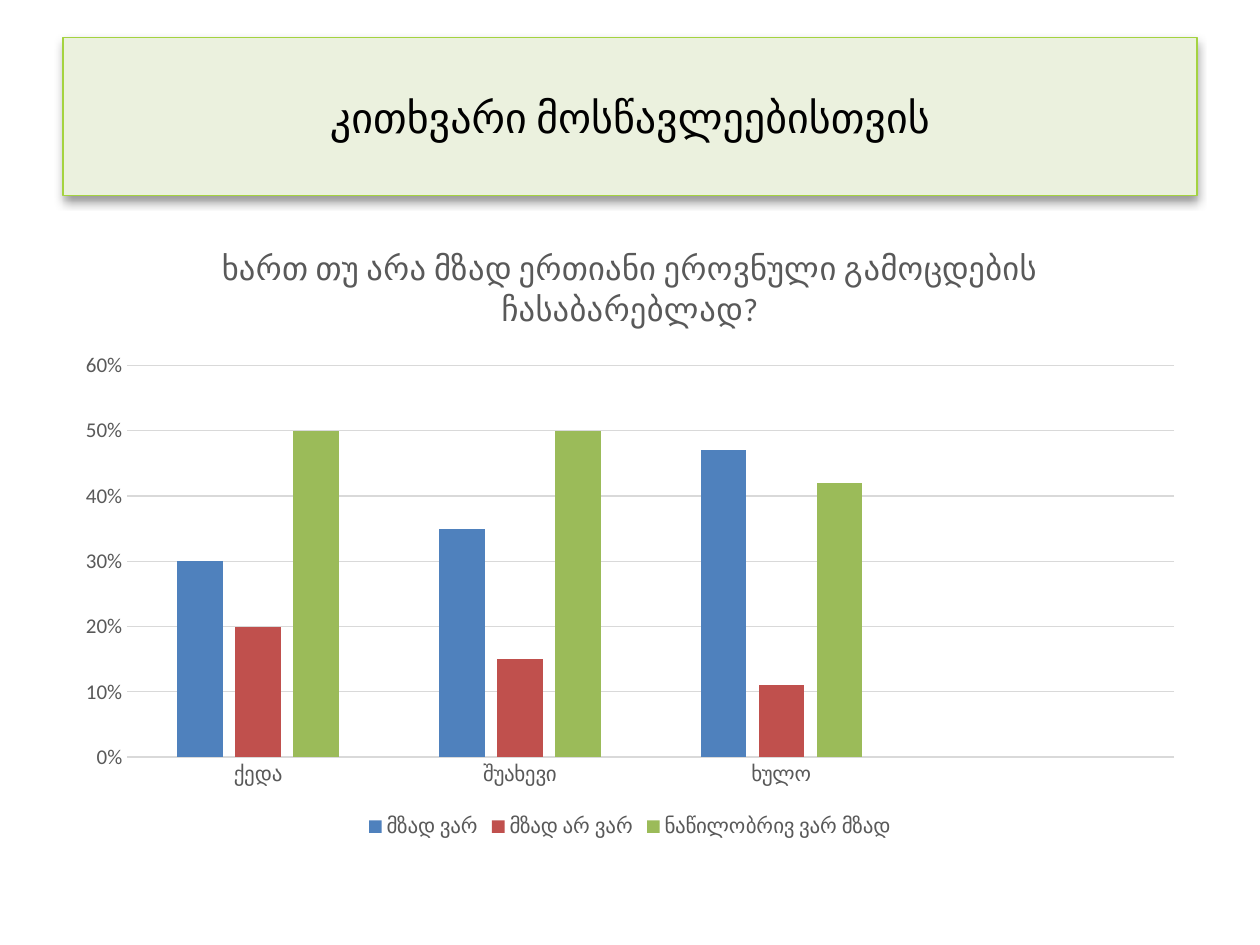
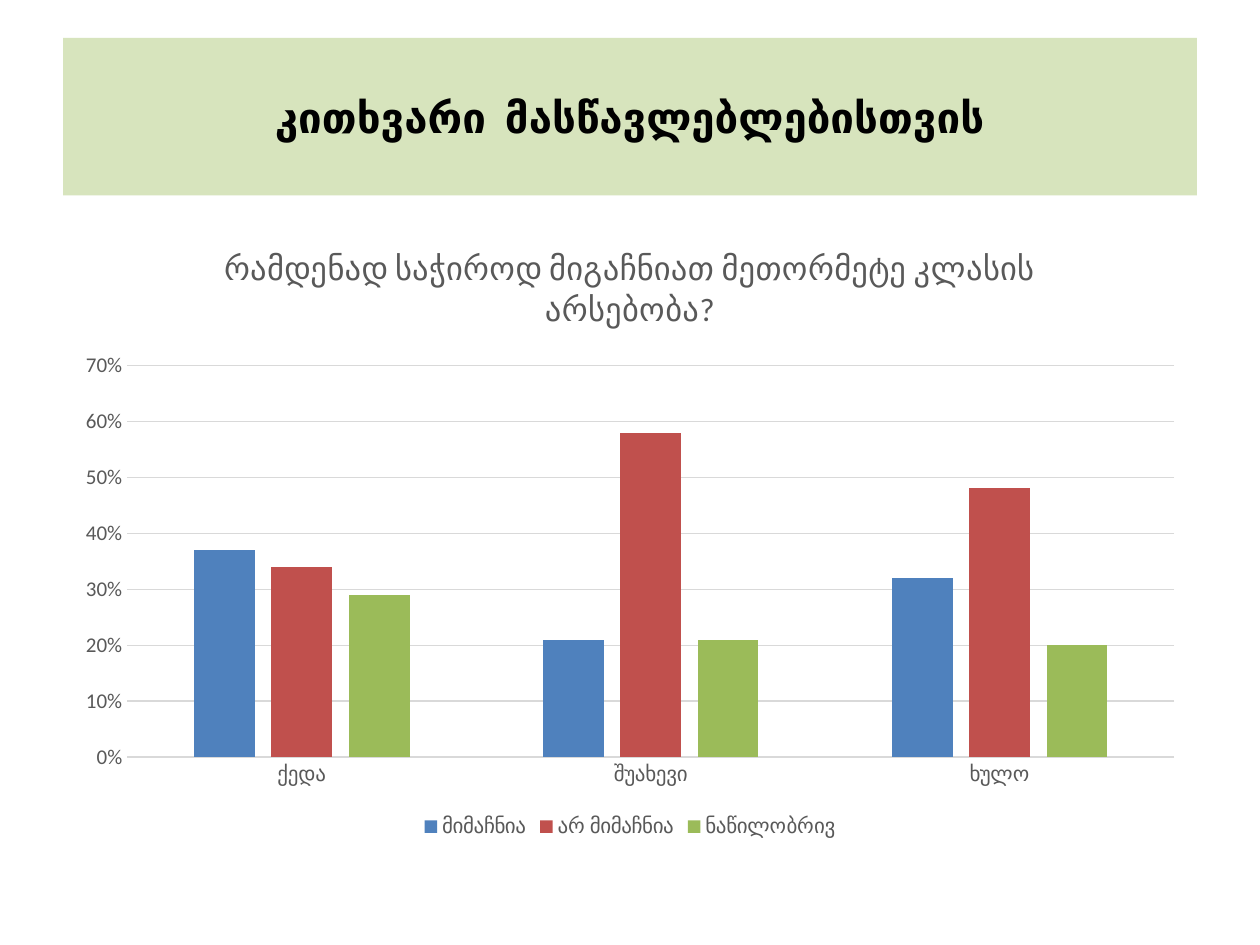
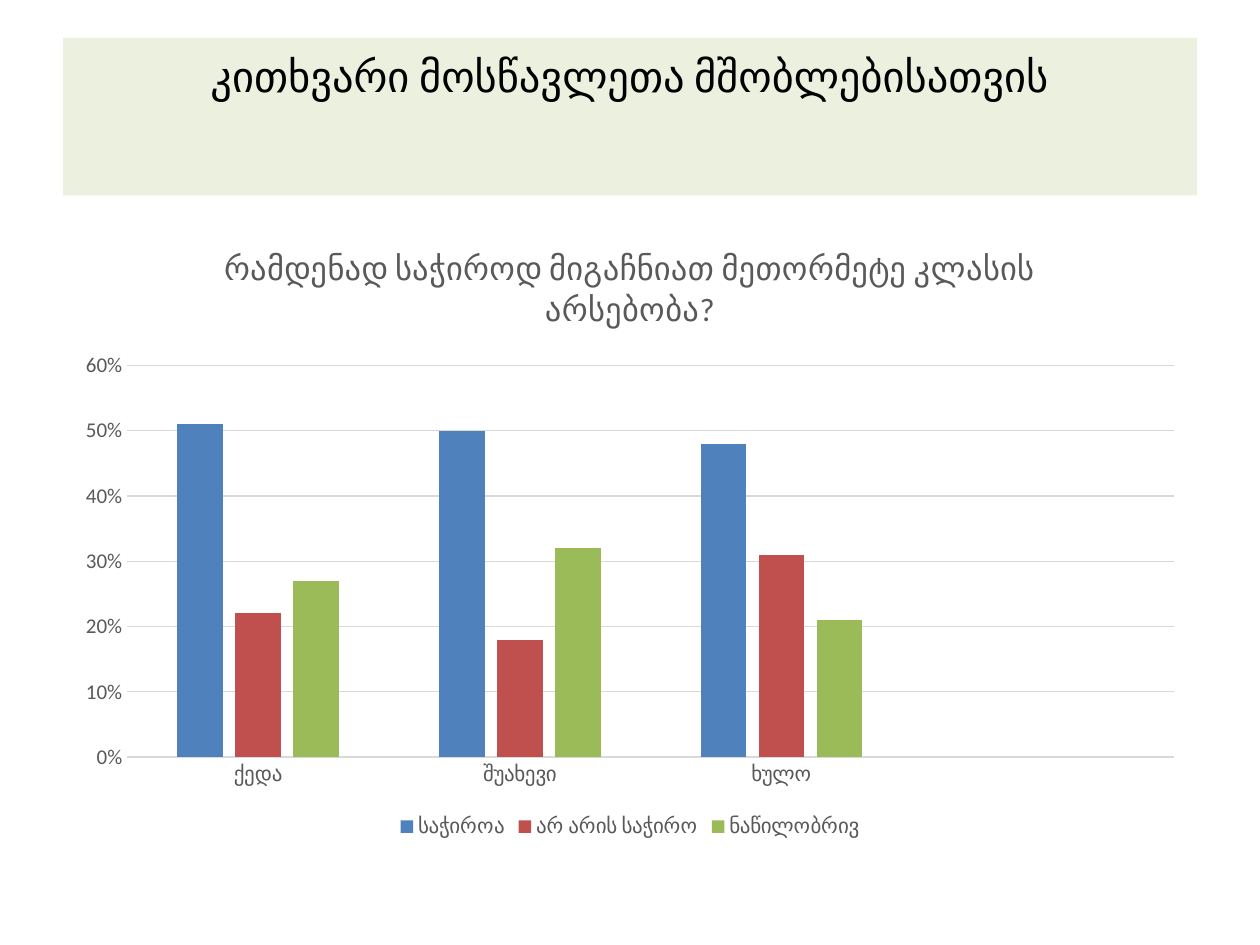
from dataclasses import dataclass

from lxml.etree import SubElement
from pptx import Presentation
from pptx.chart.data import CategoryChartData
from pptx.dml.color import RGBColor as Rgb
from pptx.enum.chart import XL_CHART_TYPE as ChartType
from pptx.enum.chart import XL_LEGEND_POSITION as LegendPosition
from pptx.enum.chart import XL_TICK_MARK as TickMark
from pptx.enum.text import MSO_ANCHOR as Anchor
from pptx.enum.text import MSO_AUTO_SIZE as AutoSize
from pptx.enum.text import PP_ALIGN as Align
from pptx.oxml import parse_xml
from pptx.oxml.ns import nsdecls, qn
from pptx.util import Pt

EMU_PER_PX = 9144


@dataclass(frozen=True)
class Theme:
    font: str = "Calibri"
    ink: str = "000000"
    muted: str = "595959"
    grid: str = "D9D9D9"
    pale_band: str = "EBF1DE"
    green_band: str = "D7E4BD"
    band_edge: str = "A4D340"
    answers: tuple = ("4F81BD", "C0504D", "9BBB59")
    heading_size: float = 24
    question_size: float = 18.6
    label_size: float = 12
    base_size: float = 10
    hairline: float = 0.75


THEME = Theme()
SLIDE_SIZE = (1000, 750)
BAND_BOX = (50, 30, 900, 125)
CHART_BOX = (50, 175, 900, 495)
PLOT_BOX = (51, 115, 831, 311)
DISTRICTS = ["ქედა", "შუახევი", "ხულო"]
CLASS_QUESTION = "რამდენად საჭიროდ მიგაჩნიათ მეთორმეტე კლასის არსებობა?"


def px(*lengths):
    return [length * EMU_PER_PX for length in lengths]


def style_font(font, size, color, bold=False):
    font.name = THEME.font
    font.size = Pt(size)
    font.bold = bold
    font.color.rgb = Rgb.from_string(color)


def style_line(line, color):
    line.color.rgb = Rgb.from_string(color)
    line.width = Pt(THEME.hairline)


def add_shadow(shape):
    effects = SubElement(shape._element.spPr, qn("a:effectLst"))
    shadow = SubElement(effects, qn("a:outerShdw"), blurRad=str(Pt(5.2)),
                        dist=str(Pt(3)), dir="5400000", rotWithShape="0")
    color = SubElement(shadow, qn("a:srgbClr"), val=THEME.ink)
    SubElement(color, qn("a:alpha"), val="40000")


def add_heading(slide, wording, band, size=THEME.heading_size, bold=False,
                raised=False, space_below=5):
    heading = slide.shapes.title
    heading.left, heading.top, heading.width, heading.height = px(*BAND_BOX)
    heading.fill.solid()
    heading.fill.fore_color.rgb = Rgb.from_string(band)
    if raised:
        style_line(heading.line, THEME.band_edge)
        add_shadow(heading)
    frame = heading.text_frame
    frame.word_wrap = True
    frame.auto_size = AutoSize.NONE
    frame.vertical_anchor = Anchor.MIDDLE
    frame.margin_bottom = px(space_below)[0]
    paragraph = frame.paragraphs[0]
    paragraph.alignment = Align.CENTER
    run = paragraph.add_run()
    run.text = wording
    style_font(run.font, size, THEME.ink, bold)


def place_plot(chart):
    plot_area = chart._chartSpace.chart.plotArea
    for layout in plot_area.findall(qn("c:layout")):
        plot_area.remove(layout)
    left, top, width, height = PLOT_BOX
    chart_width, chart_height = CHART_BOX[2:]
    plot_area.insert(0, parse_xml(
        f'<c:layout {nsdecls("c")}><c:manualLayout>'
        '<c:layoutTarget val="inner"/><c:xMode val="edge"/><c:yMode val="edge"/>'
        f'<c:x val="{left / chart_width}"/><c:y val="{top / chart_height}"/>'
        f'<c:w val="{width / chart_width}"/><c:h val="{height / chart_height}"/>'
        '</c:manualLayout></c:layout>'))


def add_question(chart, question):
    chart.has_title = True
    title = chart.chart_title
    run = title.text_frame.paragraphs[0].add_run()
    run.text = question
    style_font(run.font, THEME.question_size, THEME.muted)
    title._element.find(qn("c:overlay")).set("val", "1")


def style_axes(chart):
    districts, shares = chart.category_axis, chart.value_axis
    for axis in (districts, shares):
        axis.major_tick_mark = axis.minor_tick_mark = TickMark.NONE
        style_font(axis.tick_labels.font, THEME.label_size, THEME.muted)
    style_line(districts.format.line, THEME.grid)
    shares.format.line.fill.background()
    shares.has_major_gridlines = True
    style_line(shares.major_gridlines.format.line, THEME.grid)
    shares.tick_labels.number_format = "0%"
    shares.tick_labels.number_format_is_linked = False


def add_survey_chart(slide, question, answers, spare_slot=False):
    survey = CategoryChartData(number_format="0%")
    survey.categories = DISTRICTS + [""] * spare_slot
    for answer, shares in answers.items():
        survey.add_series(answer, shares + [None] * spare_slot)
    chart = slide.shapes.add_chart(
        ChartType.COLUMN_CLUSTERED, *px(*CHART_BOX), survey).chart
    style_font(chart.font, THEME.base_size, THEME.ink)
    add_question(chart, question)
    style_axes(chart)
    chart.has_legend = True
    chart.legend.position = LegendPosition.BOTTOM
    chart.legend.include_in_layout = False
    style_font(chart.legend.font, THEME.label_size, THEME.muted)
    columns = chart.plots[0]
    columns.gap_width = 219
    columns.overlap = -27
    columns.vary_by_categories = False
    for answer, color in zip(columns.series, THEME.answers):
        answer.format.fill.solid()
        answer.format.fill.fore_color.rgb = Rgb.from_string(color)
    place_plot(chart)


def main():
    deck = Presentation()
    deck.slide_width, deck.slide_height = px(*SLIDE_SIZE)
    title_only = deck.slide_layouts[5]

    pupils = deck.slides.add_slide(title_only)
    add_heading(pupils, "კითხვარი მოსწავლეებისთვის", THEME.pale_band, raised=True)
    add_survey_chart(
        pupils, "ხართ თუ არა მზად ერთიანი ეროვნული გამოცდების ჩასაბარებლად?",
        {"მზად ვარ": [0.3, 0.35, 0.47],
         "მზად არ ვარ": [0.2, 0.15, 0.11],
         "ნაწილობრივ ვარ მზად": [0.5, 0.5, 0.42]}, spare_slot=True)

    teachers = deck.slides.add_slide(title_only)
    add_heading(teachers, "კითხვარი  მასწავლებლებისთვის", THEME.green_band, bold=True)
    add_survey_chart(
        teachers, CLASS_QUESTION,
        {"მიმაჩნია": [0.37, 0.21, 0.32],
         "არ მიმაჩნია": [0.34, 0.58, 0.48],
         "ნაწილობრივ": [0.29, 0.21, 0.2]})

    parents = deck.slides.add_slide(title_only)
    add_heading(parents, "კითხვარი მოსწავლეთა მშობლებისათვის", THEME.pale_band,
                size=24.3, space_below=70)
    add_survey_chart(
        parents, CLASS_QUESTION,
        {"საჭიროა": [0.51, 0.5, 0.48],
         "არ არის საჭირო": [0.22, 0.18, 0.31],
         "ნაწილობრივ": [0.27, 0.32, 0.21]}, spare_slot=True)

    deck.save("out.pptx")


if __name__ == "__main__":
    main()
